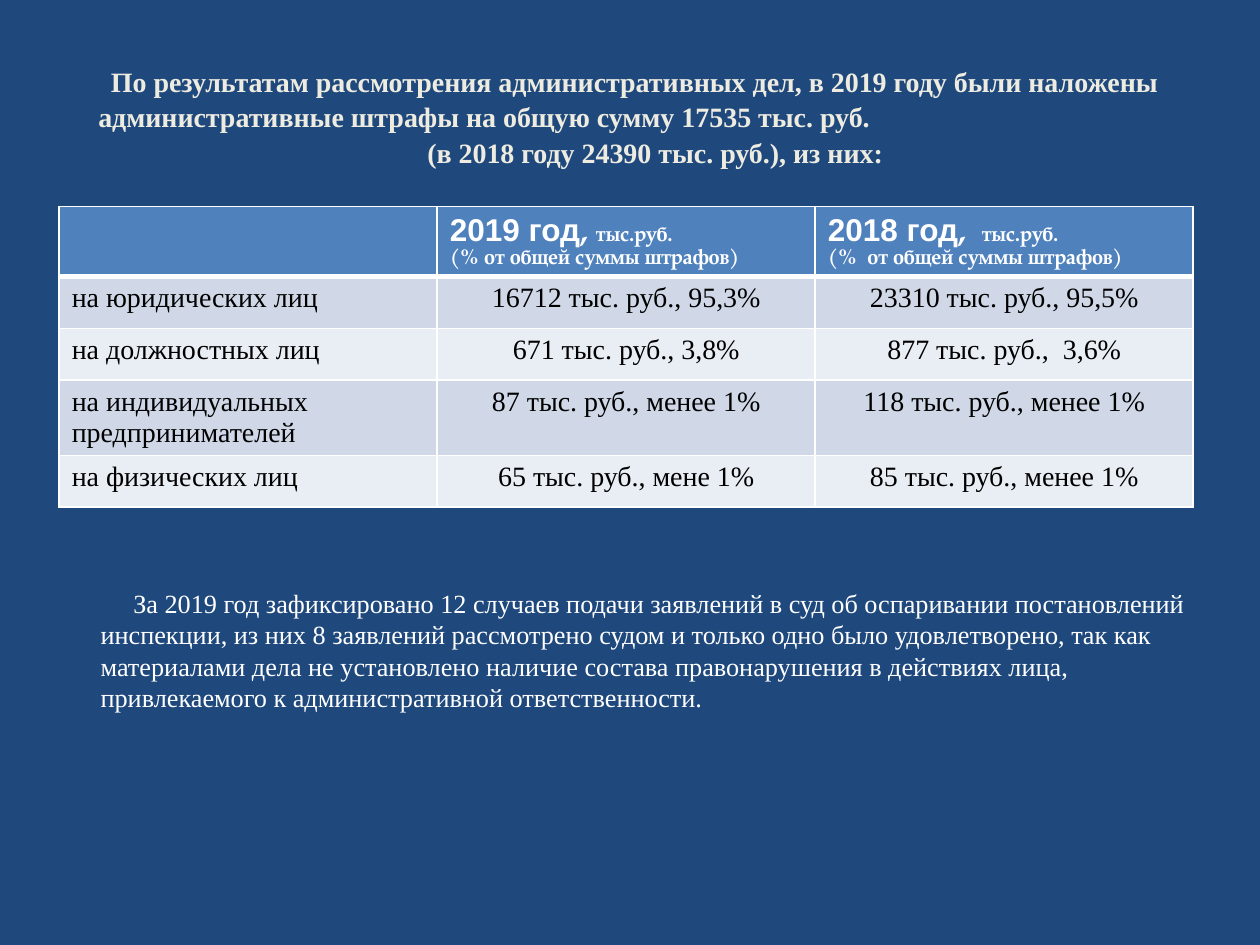
from lxml.etree import SubElement
from pptx import Presentation
from pptx.dml.color import RGBColor
from pptx.enum.text import MSO_ANCHOR, MSO_AUTO_SIZE, PP_ALIGN
from pptx.oxml.ns import qn
from pptx.util import Inches, Pt

NAVY = RGBColor(0x1F, 0x49, 0x7D)
CREAM = RGBColor(0xEE, 0xEC, 0xE1)
BLUE = RGBColor(0x4F, 0x81, 0xBD)
BANDS = (RGBColor(0xD0, 0xD8, 0xE8), RGBColor(0xE9, 0xED, 0xF4))
WHITE = RGBColor(0xFF, 0xFF, 0xFF)
BLACK = RGBColor(0, 0, 0)
SERIF, SANS, PAGELLA = "Times New Roman", "Arial", "TeX Gyre Pagella"

TITLE = (
    "По результатам рассмотрения административных дел, в 2019 году были наложены "
    "административные штрафы на общую сумму 17535 тыс. руб.",
    "(в 2018 году 24390 тыс. руб.), из них:",
)
HEADS = (
    ("2019 год", ", ", "(% от\u00a0общей суммы штрафов)"),
    ("2018 год", ",  ", "(%  от\u00a0общей суммы штрафов)"),
)
ROWS = (
    ("на юридических лиц", "16712 тыс. руб., 95,3%", "23310 тыс. руб., 95,5%"),
    ("на должностных лиц", "671 тыс. руб., 3,8%", "877 тыс. руб.,  3,6%"),
    ("на индивидуальных предпринимателей", "87 тыс. руб., менее 1%",
     "118 тыс. руб., менее 1%"),
    ("на физических лиц", "65 тыс. руб., мене 1%", "85 тыс. руб., менее 1%"),
)
HEIGHTS = (0.55, 0.41, 0.41, 0.6, 0.41)
NOTE = (
    "За 2019 год зафиксировано 12 случаев подачи заявлений в суд об\u00a0оспаривании "
    "постановлений инспекции, из них 8 заявлений рассмотрено судом и только одно было "
    "удовлетворено, так как материалами дела не\u00a0установлено наличие состава "
    "правонарушения в действиях лица, привлекаемого к административной ответственности."
)


def style(run, size, color, face=SERIF, bold=False):
    """Set the font of a run."""
    font = run.font
    font.size, font.name, font.bold = Pt(size), face, bold
    font.color.rgb = color


def indent(para, first=0, left=0):
    """Set the first-line indent and left margin of a paragraph."""
    props = para._p.get_or_add_pPr()
    props.set("marL", str(Inches(left)))
    props.set("indent", str(Inches(first)))


def border(cell, base):
    """Draw white cell borders, the bottom one with its own width."""
    props = cell._tc.get_or_add_tcPr()
    for side, width in (("L", 1), ("R", 1), ("T", 1), ("B", base)):
        line = SubElement(props, qn(f"a:ln{side}"), w=str(Pt(width)))
        fill = SubElement(line, qn("a:solidFill"))
        SubElement(fill, qn("a:srgbClr"), val=str(WHITE))


def add_title(slide, box):
    """Place the heading in the title placeholder."""
    title = slide.shapes.title
    title.left, title.top, title.width, title.height = map(Inches, box)
    frame = title.text_frame
    frame.auto_size = MSO_AUTO_SIZE.NONE
    frame.vertical_anchor = MSO_ANCHOR.BOTTOM
    frame.margin_left = frame.margin_right = frame.margin_bottom = 0
    frame.text = "\n".join(TITLE)
    lead, tail = frame.paragraphs
    lead.alignment, tail.alignment = PP_ALIGN.LEFT, PP_ALIGN.CENTER
    indent(lead, first=0.1)
    indent(tail, left=0.32)
    for para in frame.paragraphs:
        para.line_spacing = 1.05
        style(para.runs[0], 16, CREAM, bold=True)


def add_head(cell, year, comma, share):
    """Write a year heading with its unit and share lines."""
    para = cell.text_frame.paragraphs[0]
    parts = ((year, 18, SANS), (comma, 18, PAGELLA),
             ("тыс.руб.", 12, PAGELLA), (share, 12, PAGELLA))
    for text, size, face in parts:
        if text == share:
            para.add_line_break()
        run = para.add_run()
        run.text = text
        style(run, size, WHITE, face, True)


def add_fines(slide, box):
    """Place the table of fines."""
    table = slide.shapes.add_table(
        len(ROWS) + 1, len(ROWS[0]), *map(Inches, box)).table
    for row, height in zip(table.rows, HEIGHTS):
        row.height = Inches(height)
    for col in table.columns:
        col.width = Inches(box[2] / len(ROWS[0]))
    for cell in table.rows[0].cells:
        border(cell, 3)
        cell.fill.solid()
        cell.fill.fore_color.rgb = BLUE
    for col, head in enumerate(HEADS, 1):
        add_head(table.cell(0, col), *head)
    for row, texts in enumerate(ROWS, 1):
        for col, text in enumerate(texts):
            cell = table.cell(row, col)
            border(cell, 1)
            cell.fill.solid()
            cell.fill.fore_color.rgb = BANDS[(row - 1) % 2]
            cell.text_frame.text = text
            para = cell.text_frame.paragraphs[0]
            para.alignment = PP_ALIGN.CENTER if col else PP_ALIGN.LEFT
            style(para.runs[0], 16, BLACK)


def add_note(slide, box):
    """Place the closing paragraph on court appeals."""
    frame = slide.shapes.add_textbox(*map(Inches, box)).text_frame
    frame.word_wrap = True
    frame.text = NOTE
    para = frame.paragraphs[0]
    indent(para, first=0.26)
    style(para.runs[0], 15, WHITE)


def main():
    """Build the slide and save it."""
    deck = Presentation()
    deck.slide_width, deck.slide_height = Inches(10), Inches(7.5)
    slide = deck.slides.add_slide(deck.slide_layouts[5])
    slide.background.fill.solid()
    slide.background.fill.fore_color.rgb = NAVY
    add_title(slide, (0.78, 0.47, 8.52, 0.87))
    add_fines(slide, (0.47, 1.64, 9, sum(HEIGHTS)))
    add_note(slide, (0.7, 4.61, 8.91, 1.11))
    deck.save("out.pptx")


if __name__ == "__main__":
    main()
